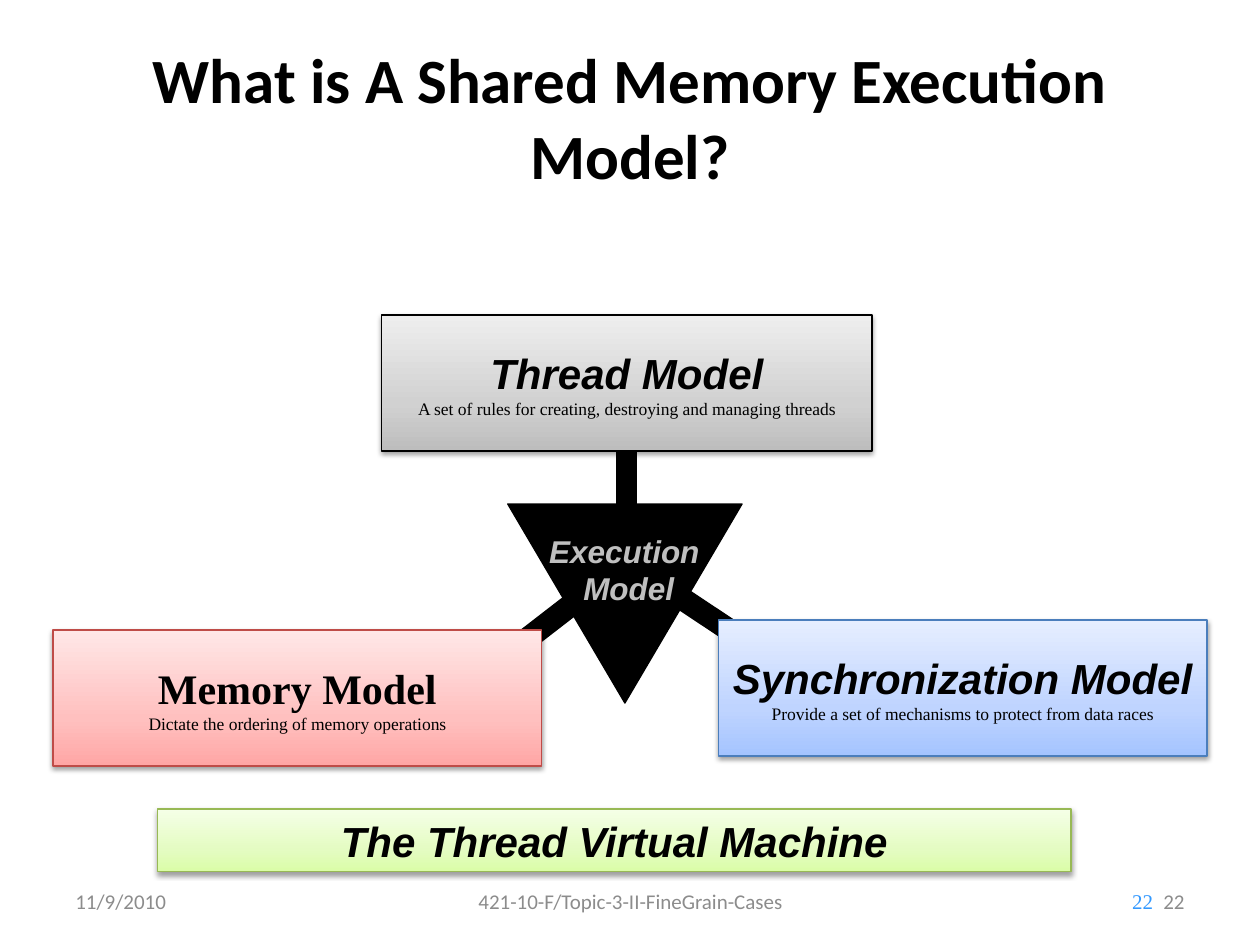
from dataclasses import dataclass

from lxml import etree
from copy import deepcopy
from pptx import Presentation
from pptx import util as u
from pptx.dml.color import RGBColor
from pptx.enum import shapes, text
from pptx.oxml.ns import qn

BLACK, GREY, SILVER, SKY = "000000", "8C8C8C", "BFBFBF", "3399FF"
ARIAL, CALIBRI, TIMES = "Arial", "Calibri", "Times New Roman"
LEFT, CENTER, RIGHT = text.PP_ALIGN.LEFT, text.PP_ALIGN.CENTER, text.PP_ALIGN.RIGHT
TOP, MIDDLE = text.MSO_ANCHOR.TOP, text.MSO_ANCHOR.MIDDLE
RECTANGLE = shapes.MSO_SHAPE.RECTANGLE


@dataclass
class Frame:
    left: float
    top: float
    width: float
    height: float

    def lengths(self):
        return [u.Inches(v) for v in (self.left, self.top, self.width, self.height)]


@dataclass
class Style:
    size: float
    font: str
    color: str = BLACK
    bold: bool = False
    italic: bool = False


@dataclass
class Line:
    words: str
    style: Style


@dataclass
class Card:
    frame: Frame
    lines: list[Line]
    shades: tuple[str, str, str]  # bottom to top
    border: str


@dataclass
class Label:
    frame: Frame
    lines: list[Line]
    align: text.PP_ALIGN = CENTER
    anchor: text.MSO_ANCHOR = MIDDLE
    wrap: bool = True


@dataclass
class Solid:
    frame: Frame
    kind: shapes.MSO_SHAPE = RECTANGLE
    rotation: float = 0


HEADING = Style(24, ARIAL, bold=True, italic=True)
SERIF_HEADING = Style(24, TIMES, bold=True)
DETAIL = Style(10, TIMES)
FOOTER = Style(12, CALIBRI, GREY)
CENTER_LABEL = Style(18, ARIAL, SILVER, bold=True, italic=True)

HUB = [
    Solid(Frame(3.83, 4.75, 1.32, 0.17), rotation=322.3),
    Solid(Frame(4.82, 4.71, 1.32, 0.17), rotation=213.6),
    Solid(Frame(4.26, 3.88, 1.42, 0.16), rotation=90),
    Solid(Frame(4.03, 4, 1.86, 1.58), shapes.MSO_SHAPE.FLOWCHART_MERGE),
]

CARDS = [
    Card(Frame(3.03, 2.5, 3.89, 1.08),
         [Line("Thread Model", HEADING),
          Line("A set of rules for creating, destroying and managing threads", DETAIL)],
         ("BDBDBD", "D1D1D1", "EEEEEE"), BLACK),
    Card(Frame(0.42, 5, 3.88, 1.08),
         [Line("Memory Model", SERIF_HEADING),
          Line("Dictate the ordering of memory operations", DETAIL)],
         ("FFA6A5", "FFC0BF", "FFE7E7"), "BF4C48"),
    Card(Frame(5.7, 4.92, 3.88, 1.08),
         [Line("Synchronization Model", HEADING),
          Line("Provide a set of mechanisms to protect from data races", DETAIL)],
         ("A4C4FF", "BFD4FF", "E6EEFF"), "4B7EBC"),
    Card(Frame(1.25, 6.42, 7.25, 0.5),
         [Line("The Thread Virtual Machine", HEADING)],
         ("DAFDA7", "E4FCC2", "F5FFE7"), "98B955"),
]

LABELS = [
    Label(Frame(0.5, 0.3, 9, 1.25),
          [Line("What is A Shared Memory Execution Model?", Style(36, CALIBRI, bold=True))]),
    Label(Frame(4.25, 4.17, 1.48, 0.71),
          [Line("Execution ", CENTER_LABEL), Line("Model", CENTER_LABEL)],
          anchor=TOP, wrap=False),
    Label(Frame(0.5, 6.95, 2.33, 0.4), [Line("11/9/2010", FOOTER)], LEFT),
    Label(Frame(3.42, 6.95, 3.17, 0.4), [Line("421-10-F/Topic-3-II-FineGrain-Cases", FOOTER)]),
    Label(Frame(7.17, 6.95, 2.33, 0.4), [Line("22", FOOTER)], RIGHT),
    Label(Frame(7.17, 7, 2.08, 0.5), [Line("22", Style(12, TIMES, SKY))], RIGHT, TOP),
]


def rgb(value: str) -> RGBColor:
    return RGBColor.from_string(value)


def write(box, lines: list[Line], align=CENTER, anchor=MIDDLE, wrap=True) -> None:
    frame = box.text_frame
    frame.word_wrap = wrap
    frame.vertical_anchor = anchor
    frame.text = "\n".join(line.words for line in lines)
    for para, line in zip(frame.paragraphs, lines):
        para.alignment = align
        for span in para.runs:
            font, style = span.font, line.style
            font.size, font.name = u.Pt(style.size), style.font
            font.bold, font.italic = style.bold, style.italic
            font.color.rgb = rgb(style.color)


def add_outlined(page, kind, frame: Frame, border: str):
    box = page.shapes.add_shape(kind, *frame.lengths())
    box.shadow.inherit = False
    box.line.color.rgb = rgb(border)
    box.line.width = u.Pt(0.75)
    return box


def shade(box, colors: tuple[str, str, str]) -> None:
    """Fill with a three-stop gradient running from bottom to top."""
    box.fill.gradient()
    box.fill.gradient_angle = 90
    stop_list = box._element.spPr.find(".//" + qn("a:gsLst"))
    stop_list.append(deepcopy(stop_list[0]))
    for stop, color, position in zip(box.fill.gradient_stops, colors, (0, 0.35, 1)):
        stop.color.rgb = rgb(color)
        stop.position = position


def cast_shadow(box) -> None:
    effects = box._element.spPr.find(qn("a:effectLst"))
    shadow = etree.SubElement(
        effects, qn("a:outerShdw"), blurRad=str(u.Pt(3.1)), dist=str(u.Pt(1.6)),
        dir="5400000", rotWithShape="0")
    color = etree.SubElement(shadow, qn("a:srgbClr"), val=BLACK)
    etree.SubElement(color, qn("a:alpha"), val="38000")


def add_solid(page, solid: Solid) -> None:
    box = add_outlined(page, solid.kind, solid.frame, BLACK)
    box.fill.solid()
    box.fill.fore_color.rgb = rgb(BLACK)
    box.rotation = solid.rotation


def add_card(page, card: Card) -> None:
    box = add_outlined(page, RECTANGLE, card.frame, card.border)
    shade(box, card.shades)
    cast_shadow(box)
    write(box, card.lines)


def add_label(page, label: Label) -> None:
    box = page.shapes.add_textbox(*label.frame.lengths())
    write(box, label.lines, label.align, label.anchor, label.wrap)


def main() -> None:
    deck = Presentation()
    deck.slide_width, deck.slide_height = u.Inches(10), u.Inches(7.5)
    page = deck.slides.add_slide(deck.slide_layouts[6])
    for solid in HUB:
        add_solid(page, solid)
    for card in CARDS:
        add_card(page, card)
    for label in LABELS:
        add_label(page, label)
    deck.save("out.pptx")


if __name__ == "__main__":
    main()
